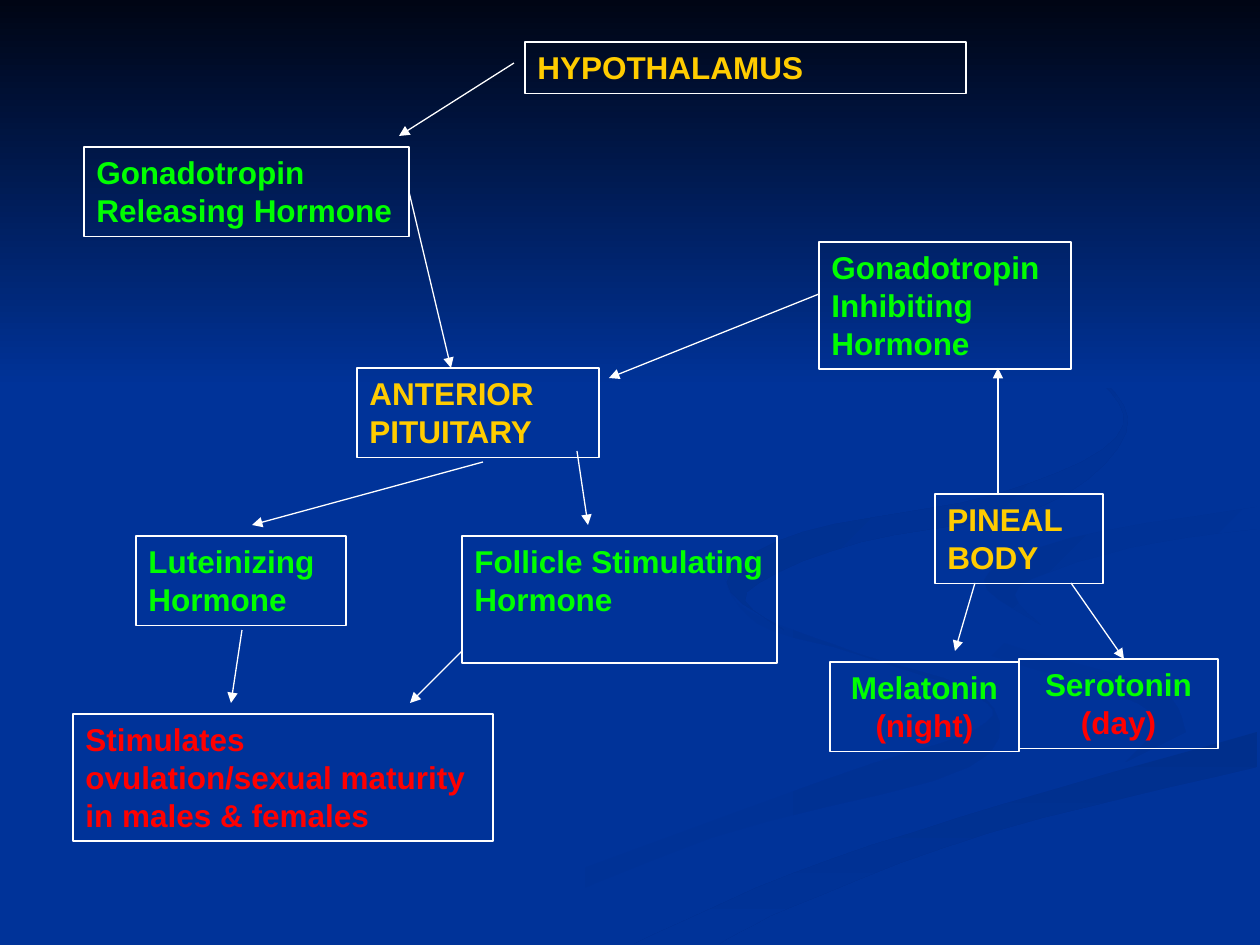
from dataclasses import dataclass
from lxml.etree import SubElement
from pptx import Presentation
from pptx.dml.color import RGBColor
from pptx.enum.shapes import MSO_CONNECTOR, MSO_SHAPE
from pptx.enum.text import MSO_AUTO_SIZE, PP_ALIGN
from pptx.oxml.ns import qn
from pptx.util import Pt

PX = 914400 / 126
WIDTH, HEIGHT = 1260, 945
SKY_HEIGHT = 388
CURVE_STEPS = 5


@dataclass(frozen=True)
class Theme:
    background: str = "003399"
    night: str = "000514"
    ribbon_light: str = "003193"
    ribbon_dark: str = "002F8C"
    line: str = "FFFFFF"
    gland: str = "FFCC00"
    hormone: str = "00FF00"
    effect: str = "FF0000"
    font: str = "Arial"
    size: int = 18
    line_width: float = 0.75


THEME = Theme()
GLAND, HORMONE, EFFECT = THEME.gland, THEME.hormone, THEME.effect

RIBBONS = [
    ([(724, 578), (758, 624), (856, 654), (978, 697), (975, 730), (822, 781), (378, 944)],
     [(455, 944), (711, 838), (969, 767), (984, 697), (859, 654), (748, 611), (724, 578)],
     THEME.background, THEME.ribbon_light, 0),
    ([(912, 585), (965, 645), (1124, 697), (1155, 726), (1126, 762)],
     [(1186, 732), (1158, 689), (1022, 649), (939, 617), (912, 585)],
     THEME.background, THEME.ribbon_light, 45),
    ([(634, 944), (794, 873), (1004, 804), (1257, 732)],
     [(1257, 767), (989, 833), (794, 906), (719, 944)],
     THEME.ribbon_dark, THEME.background, 90),
    ([(1041, 625), (1019, 587), (1129, 548), (1257, 529)],
     [(1257, 507), (1070, 538), (984, 580), (1041, 625)],
     THEME.ribbon_light, THEME.background, 45),
    ([(960, 294), (1096, 377), (1116, 438), (997, 494), (803, 532), (727, 582), (784, 630)],
     [(784, 630), (747, 592), (861, 542), (1040, 507), (1126, 433), (1089, 367), (960, 294)],
     THEME.ribbon_dark, THEME.background, 45),
]

BOXES = {
    "releasing": (84, 147, 325, 2, [("Gonadotropin Releasing Hormone", HORMONE)]),
    "pituitary": (357, 368, 242, 2, [("ANTERIOR PITUITARY", GLAND)]),
    "luteinizing": (136, 536, 210, 2, [("Luteinizing Hormone", HORMONE)]),
    "effect": (73, 714, 420, 3,
               [("Stimulates ovulation/sexual maturity in males & females", EFFECT)]),
    "hypothalamus": (525, 42, 441, 1, [("HYPOTHALAMUS", GLAND)]),
    "follicle": (462, 536, 315, 3, [("Follicle Stimulating Hormone", HORMONE)]),
    "inhibiting": (819, 242, 252, 3, [("Gonadotropin Inhibiting Hormone", HORMONE)]),
    "pineal": (935, 494, 168, 2, [("PINEAL BODY", GLAND)]),
    "serotonin": (1019, 659, 199, 2, [("Serotonin ", HORMONE), ("(day)", EFFECT)]),
    "melatonin": (830, 662, 189, 2, [("Melatonin ", HORMONE), ("(night)", EFFECT)]),
}

ARROWS = [
    (483, 462, 252, 525),
    (242, 630, 231, 703),
    (514, 63, 399, 136),
    (577, 451, 588, 525),
    (462, 651, 410, 703),
    (819, 294, 609, 378),
    (998, 494, 998, 368),
    (975, 583, 955, 651),
    (1071, 583, 1124, 659),
]


def px(*lengths):
    return [round(length * PX) for length in lengths]


def color(code):
    return RGBColor.from_string(code)


def style_line(line):
    line.color.rgb = color(THEME.line)
    line.width = Pt(THEME.line_width)


def smooth(points):
    padded = [points[0], *points, points[-1]]
    curve = []
    for before, start, end, after in zip(padded, padded[1:], padded[2:], padded[3:]):
        for step in range(CURVE_STEPS):
            t = step / CURVE_STEPS
            curve.append(tuple(
                b + t * (c - a + t * (2 * a - 5 * b + 4 * c - d + t * (3 * (b - c) + d - a))) / 2
                for a, b, c, d in zip(before, start, end, after)))
    return curve + [points[-1]]


def fill_gradient(shape, start, end, angle):
    shape.shadow.inherit = False
    shape.line.fill.background()
    shape.fill.gradient()
    shape.fill.gradient_angle = (360 - angle) % 360
    for stop, code in zip(shape.fill.gradient_stops, (start, end)):
        stop.color.rgb = color(code)


def add_ribbon(page, near_edge, far_edge, start, end, angle):
    outline = smooth(near_edge) + smooth(far_edge)
    builder = page.shapes.build_freeform(*outline[0], scale=PX)
    builder.add_line_segments(outline[1:], close=True)
    fill_gradient(builder.convert_to_shape(), start, end, angle)


def add_sky(page):
    sky = page.shapes.add_shape(MSO_SHAPE.RECTANGLE, *px(0, 0, WIDTH, SKY_HEIGHT))
    fill_gradient(sky, THEME.night, THEME.background, 90)


def add_box(page, left, top, width, lines, spans):
    height = 14 + 37.7 * lines
    box = page.shapes.add_textbox(*px(left, top, width, height))
    style_line(box.line)
    frame = box.text_frame
    frame.word_wrap = True
    frame.auto_size = MSO_AUTO_SIZE.SHAPE_TO_FIT_TEXT
    para = frame.paragraphs[0]
    para.alignment = PP_ALIGN.CENTER if len(spans) > 1 else PP_ALIGN.LEFT
    for text, code in spans:
        span = para.add_run()
        span.text = text
        span.font.name = THEME.font
        span.font.size = Pt(THEME.size)
        span.font.bold = True
        span.font.color.rgb = color(code)
    return box


def add_arrow(page, *ends):
    arrow = page.shapes.add_connector(MSO_CONNECTOR.STRAIGHT, *px(*ends))
    style_line(arrow.line)
    properties = arrow._element.spPr
    SubElement(properties.find(qn("a:ln")), qn("a:tailEnd"), type="triangle")
    SubElement(properties, qn("a:effectLst"))
    return arrow


def main():
    deck = Presentation()
    deck.slide_width, deck.slide_height = px(WIDTH, HEIGHT)
    page = deck.slides.add_slide(deck.slide_layouts[6])
    page.background.fill.solid()
    page.background.fill.fore_color.rgb = color(THEME.background)
    for ribbon in RIBBONS:
        add_ribbon(page, *ribbon)
    add_sky(page)
    boxes = {name: add_box(page, *box) for name, box in BOXES.items()}
    for ends in ARROWS:
        add_arrow(page, *ends)
    add_arrow(page, 409, 189, 451, 368).begin_connect(boxes["releasing"], 3)
    deck.save("out.pptx")


if __name__ == "__main__":
    main()
